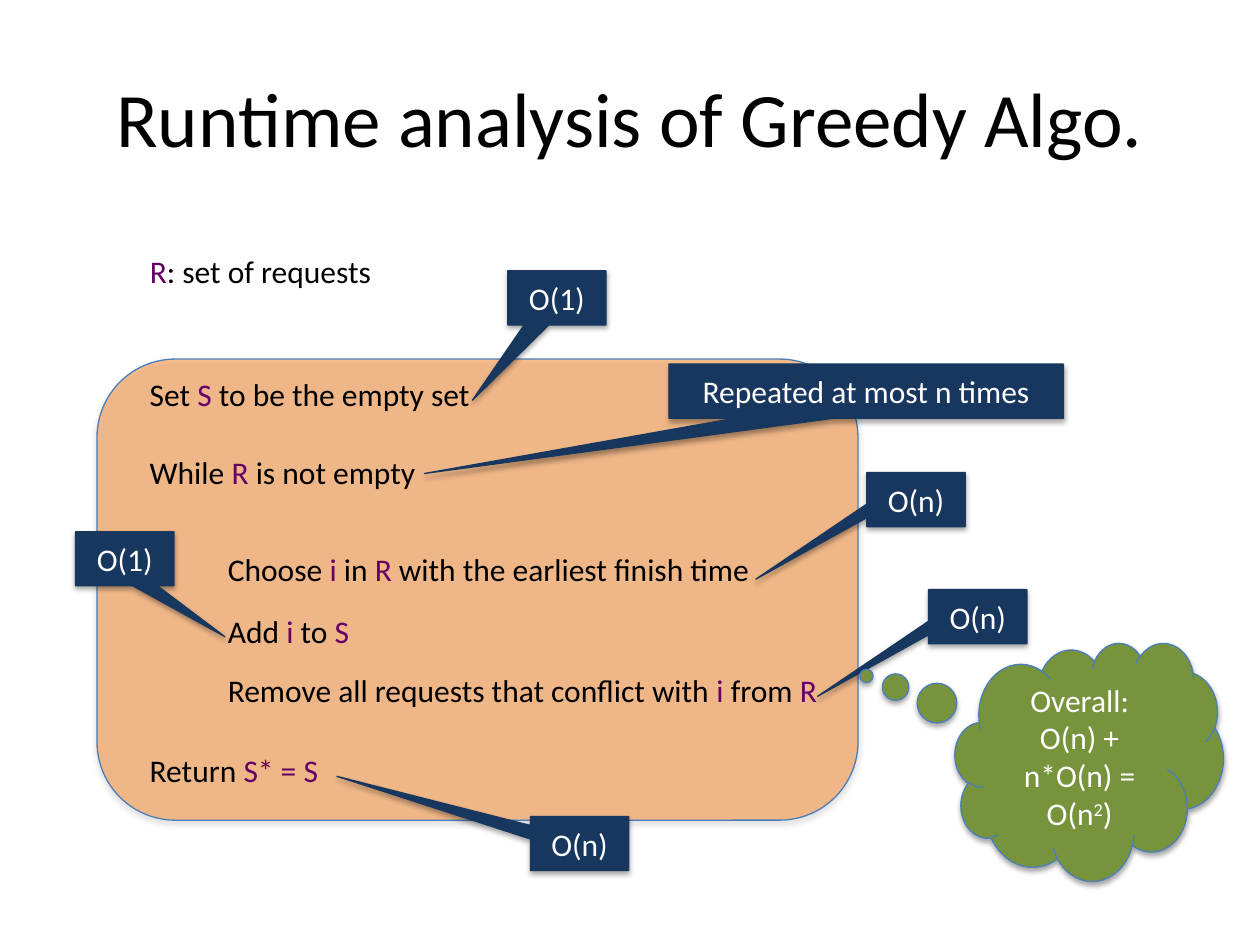
from dataclasses import dataclass

from lxml.etree import SubElement
from pptx import Presentation
from pptx.dml.color import RGBColor
from pptx.enum.shapes import MSO_SHAPE as SHAPE
from pptx.enum.text import MSO_ANCHOR as ANCHOR, MSO_AUTO_SIZE as AUTO, PP_ALIGN as ALIGN
from pptx.oxml.ns import qn
from pptx.util import Pt

PX = 9144  # EMU per px, 100 px to the inch


@dataclass(frozen=True)
class Theme:
    font: str = "Calibri"
    title_size: int = 44
    body_size: int = 18
    text: str = "000000"
    variable: str = "660066"
    light: str = "FFFFFF"
    panel: str = "F79646"
    panel_line: str = "4A7EBB"
    panel_shadow: str = "808080"
    cost: str = "17375E"
    cloud: str = "77933C"
    cloud_line: str = "4B7EBC"
    shadow: str = "000000"


def emu(*lengths):
    return [n * PX for n in lengths]


def add_alpha(color, percent):
    SubElement(color, qn("a:alpha"), val=str(percent * 1000))


class SlideBuilder:
    def __init__(self, prs, theme):
        self.theme = theme
        self.s = prs.slides.add_slide(prs.slide_layouts[5])

    def add_text(self, tf, text, color, size=None, marked=None, raised=False, align=ALIGN.LEFT):
        """Fill one paragraph; each part between | marks is coloured or raised."""
        p = tf.paragraphs[0]
        p.alignment = align
        for i, part in enumerate(text.split("|")):
            if not part:
                continue
            r = p.add_run()
            r.text = part
            style = {"name": self.theme.font, "size": Pt(size or self.theme.body_size)}
            for key, value in style.items():
                setattr(r.font, key, value)
            is_marked = i % 2 == 1
            r.font.color.rgb = RGBColor.from_string(marked if is_marked and marked else color)
            if is_marked and raised:
                r.font._element.set("baseline", "30000")

    def title(self, text, *box):
        sp = self.s.shapes.title
        sp.left, sp.top, sp.width, sp.height = emu(*box)
        sp.text_frame.vertical_anchor = ANCHOR.MIDDLE
        self.add_text(sp.text_frame, text, self.theme.text, self.theme.title_size,
                      align=ALIGN.CENTER)

    def line(self, text, *box):
        tf = self.s.shapes.add_textbox(*emu(*box)).text_frame
        for key, value in {"word_wrap": False, "auto_size": AUTO.SHAPE_TO_FIT_TEXT}.items():
            setattr(tf, key, value)
        self.add_text(tf, text, self.theme.text, marked=self.theme.variable)

    def shape(self, kind, box, adjustments, fill, line, shadow):
        sp = self.s.shapes.add_shape(kind, *emu(*box))
        for i, value in enumerate(adjustments):
            sp.adjustments[i] = value
        sp.fill.solid()
        sp.fill.fore_color.rgb = RGBColor.from_string(fill)
        sp.line.color.rgb = RGBColor.from_string(line)
        sp.line.width = Pt(0.75)
        self.drop_shadow(sp, shadow)
        return sp

    def drop_shadow(self, sp, color):
        sp.shadow.inherit = False
        effects = sp._element.spPr.find(qn("a:effectLst"))
        outer = SubElement(effects, qn("a:outerShdw"), blurRad=str(Pt(3.1)),
                           dist=str(Pt(1.8)), dir="5400000", rotWithShape="0")
        add_alpha(SubElement(outer, qn("a:srgbClr"), val=color), 35)

    def panel(self, *box):
        t = self.theme
        sp = self.shape(SHAPE.ROUNDED_RECTANGLE, box, [0.17], t.panel, t.panel_line,
                        t.panel_shadow)
        add_alpha(sp._element.spPr.find(qn("a:solidFill"))[0], 59)

    def callout(self, kind, text, box, tip, fill, line):
        """Add a callout whose tip is an offset from its centre, in box sizes."""
        sp = self.shape(kind, box, tip, fill, line, self.theme.shadow)
        tf = sp.text_frame
        for key, value in {"word_wrap": True, "vertical_anchor": ANCHOR.MIDDLE}.items():
            setattr(tf, key, value)
        self.add_text(tf, text, self.theme.light, raised=True, align=ALIGN.CENTER)

    def cost(self, text, left, top, tip, width=78):
        self.callout(SHAPE.RECTANGULAR_CALLOUT, text, (left, top, width, 43), tip,
                     self.theme.cost, self.theme.cost)

    def cloud(self, text, box, tip):
        self.callout(SHAPE.CLOUD_CALLOUT, text, box, tip, self.theme.cloud,
                     self.theme.cloud_line)


def main():
    prs = Presentation()
    prs.slide_width, prs.slide_height = emu(1000, 750)
    slide = SlideBuilder(prs, Theme())

    slide.panel(77, 285, 604, 366)
    slide.title("Runtime analysis of Greedy Algo.", 50, 30, 900, 125)

    outer, inner = 109, 171  # left edges of the two indent levels
    for text, left, top, width in [
        ("|R|: set of requests", outer, 195, 198),
        ("Set |S| to be the empty set", outer, 293, 277),
        ("While |R| is not empty", outer, 355, 233),
        ("Choose |i| in |R| with the earliest finish time", inner, 432, 438),
        ("Add |i| to |S|", inner, 481, 118),
        ("Remove all requests that conflict with |i| from |R|", inner, 528, 493),
        ("Return |S* = S|", outer, 591, 156),
    ]:
        slide.line(text, left, top, width, 40)

    slide.cost("O(1)", 403, 215, (-0.86, 1.89))
    slide.cost("Repeated at most n times", 531, 289, (-1.12, 1.52), width=313)
    slide.cost("O(1)", 60, 422, (1.02, 1.44))
    slide.cost("O(n)", 688, 375, (-1.63, 1.47))
    slide.cost("O(n)", 737, 468, (-1.63, 1.47))
    slide.cost("O(n)", 421, 648, (-2.47, -1.24))
    slide.cloud("Overall: O(n) + n*O(n) = O(n|2|)", (758, 510, 213, 189), (-0.83, -0.36))

    prs.save("out.pptx")


if __name__ == "__main__":
    main()
